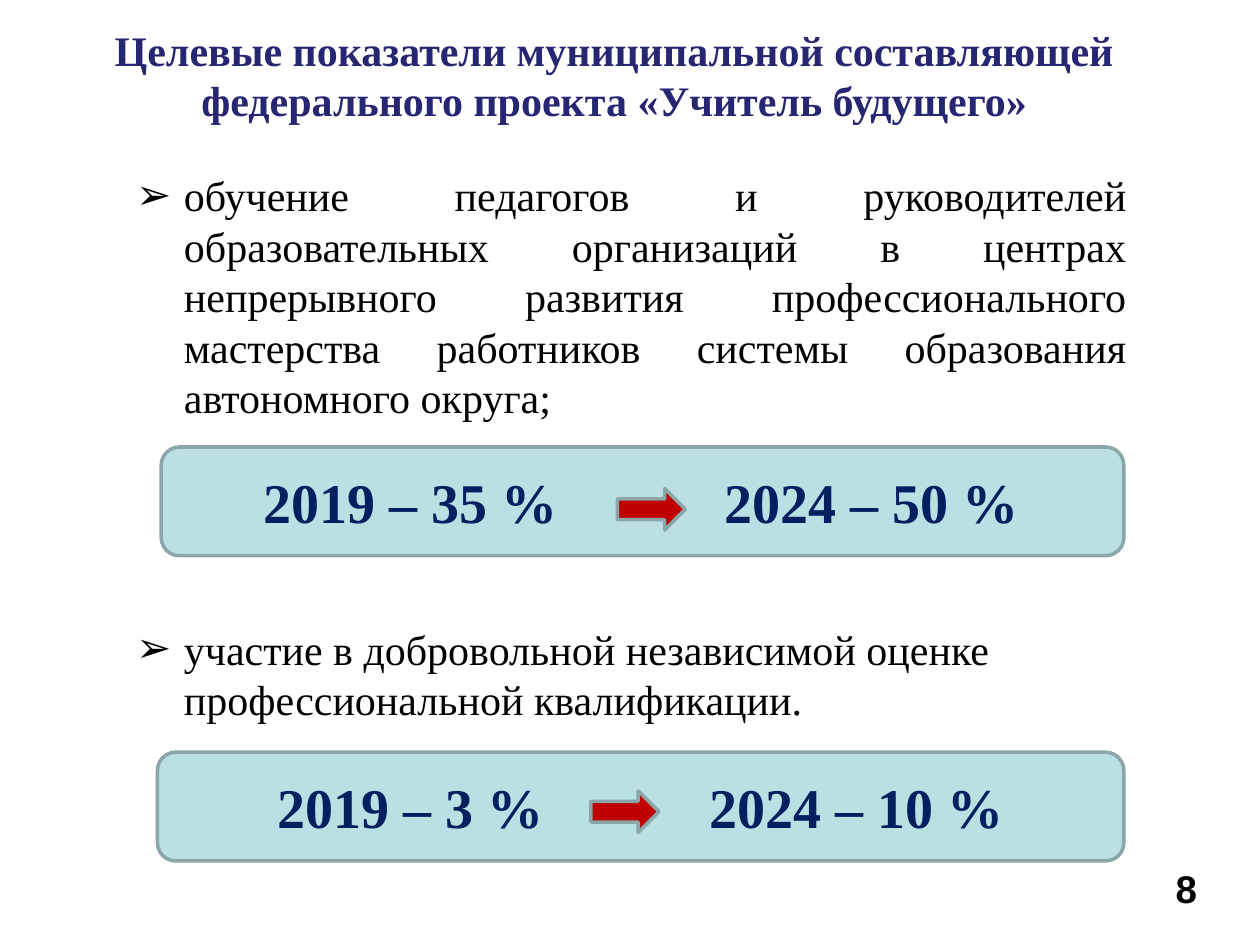
from lxml import etree
from pptx import Presentation
from pptx.dml.color import RGBColor
from pptx.enum.shapes import MSO_SHAPE
from pptx.enum.text import MSO_ANCHOR, MSO_AUTO_SIZE, PP_ALIGN
from pptx.oxml.ns import qn
from pptx.util import Inches, Pt

ROUNDED, ARROW = MSO_SHAPE.ROUNDED_RECTANGLE, MSO_SHAPE.RIGHT_ARROW
TOP, MIDDLE = MSO_ANCHOR.TOP, MSO_ANCHOR.MIDDLE
LEFT, CENTER, JUSTIFY = PP_ALIGN.LEFT, PP_ALIGN.CENTER, PP_ALIGN.JUSTIFY
NO_AUTOFIT = MSO_AUTO_SIZE.NONE

THEME = {
    "serif": "Times New Roman", "sans": "Arial",
    "title": "262673", "body": "000000", "value": "002060",
    "panel": "BBE0E3", "outline": "8AA6A8", "arrow": "C00000",
    "text_size": 24, "value_size": 32, "number_size": 22, "outline_width": 2,
}

presentation = Presentation()
presentation.slide_width, presentation.slide_height = Inches(10), Inches(7.5)
WIDTH, HEIGHT = presentation.slide_width, presentation.slide_height
slide = presentation.slides.add_slide(presentation.slide_layouts[1])


def write(paragraph, text, color="body", size="text_size", font="serif",
          bold=False, align=LEFT, before=0, indent=0, bullet=None):
    """Fill a paragraph; indent is in inches, before is in points."""
    properties = paragraph._p.get_or_add_pPr()
    properties.set("marL", str(Inches(indent)))
    properties.set("indent", str(-Inches(indent)))
    if bullet:
        etree.SubElement(properties, qn("a:buFont"), typeface=THEME["sans"])
        etree.SubElement(properties, qn("a:buChar"), char=bullet)
    else:
        etree.SubElement(properties, qn("a:buNone"))
    paragraph.alignment = align
    paragraph.space_before = Pt(before)
    run = paragraph.add_run()
    run.text = text
    run.font.name = THEME[font]
    run.font.size = Pt(THEME[size])
    run.font.bold = bold
    run.font.color.rgb = RGBColor.from_string(THEME[color])


def add_panel(preset, left, top, width, height, fill):
    """Add an outlined shape placed by shares of the slide's size."""
    shape = slide.shapes.add_shape(preset, int(WIDTH * left), int(HEIGHT * top),
                                   int(WIDTH * width), int(HEIGHT * height))
    shape.shadow.inherit = False
    shape.fill.solid()
    shape.fill.fore_color.rgb = RGBColor.from_string(THEME[fill])
    shape.line.color.rgb = RGBColor.from_string(THEME["outline"])
    shape.line.width = Pt(THEME["outline_width"])
    return shape


# Title, list and page number
title, body = slide.shapes.title, slide.placeholders[1]
number = slide.shapes.add_textbox(0, 0, 0, 0)
for shape, left, top, width, height in (
        (title, 0.071, 0.019, 0.833, 0.121),
        (body, 0.098, 0.173, 0.806, 0.66),
        (number, 0.9, 0.909, 0.083, 0.091)):
    shape.left, shape.top = int(WIDTH * left), int(HEIGHT * top)
    shape.width, shape.height = int(WIDTH * width), int(HEIGHT * height)
    shape.text_frame.word_wrap = True
    shape.text_frame.auto_size = NO_AUTOFIT
    shape.text_frame.vertical_anchor = TOP

write(title.text_frame.paragraphs[0],
      "Целевые показатели муниципальной составляющей "
      "федерального проекта «Учитель будущего»",
      color="title", bold=True, align=CENTER)
write(body.text_frame.paragraphs[0],
      "обучение педагогов и руководителей образовательных организаций "
      "в центрах непрерывного развития профессионального мастерства "
      "работников системы образования автономного округа;",
      align=JUSTIFY, indent=0.38, bullet="➢")
write(body.text_frame.add_paragraph(),
      "участие в добровольной независимой оценке "
      "профессиональной квалификации.",
      before=115, indent=0.38, bullet="➢")
write(number.text_frame.paragraphs[0], "8",
      size="number_size", font="sans", bold=True, align=CENTER)

# Target panels: start value in the panel, arrow, end value beside it
PANEL_RIGHT, PANEL_HEIGHT = 0.892, 0.115
for left, top, start, inset, end, end_left, arrow_left, arrow_top in (
        (0.128, 0.473, "2019 – 35 %", 0.77, "2024 – 50 %", 0.575, 0.49, 0.517),
        (0.125, 0.796, "2019 – 3 %", 0.91, "2024 – 10 %", 0.563, 0.469, 0.837)):
    panel = add_panel(ROUNDED, left, top, PANEL_RIGHT - left, PANEL_HEIGHT, "panel")
    panel.text_frame.margin_left = Inches(inset)
    end_box = slide.shapes.add_textbox(int(WIDTH * end_left), panel.top,
                                       int(WIDTH * (PANEL_RIGHT - end_left)),
                                       panel.height)
    end_box.text_frame.margin_left = 0
    for shape, value in ((panel, start), (end_box, end)):
        shape.text_frame.word_wrap = True
        shape.text_frame.vertical_anchor = MIDDLE
        write(shape.text_frame.paragraphs[0], value,
              color="value", size="value_size", bold=True)
    add_panel(ARROW, arrow_left, arrow_top, 0.054, 0.044, "arrow")

presentation.save("out.pptx")
